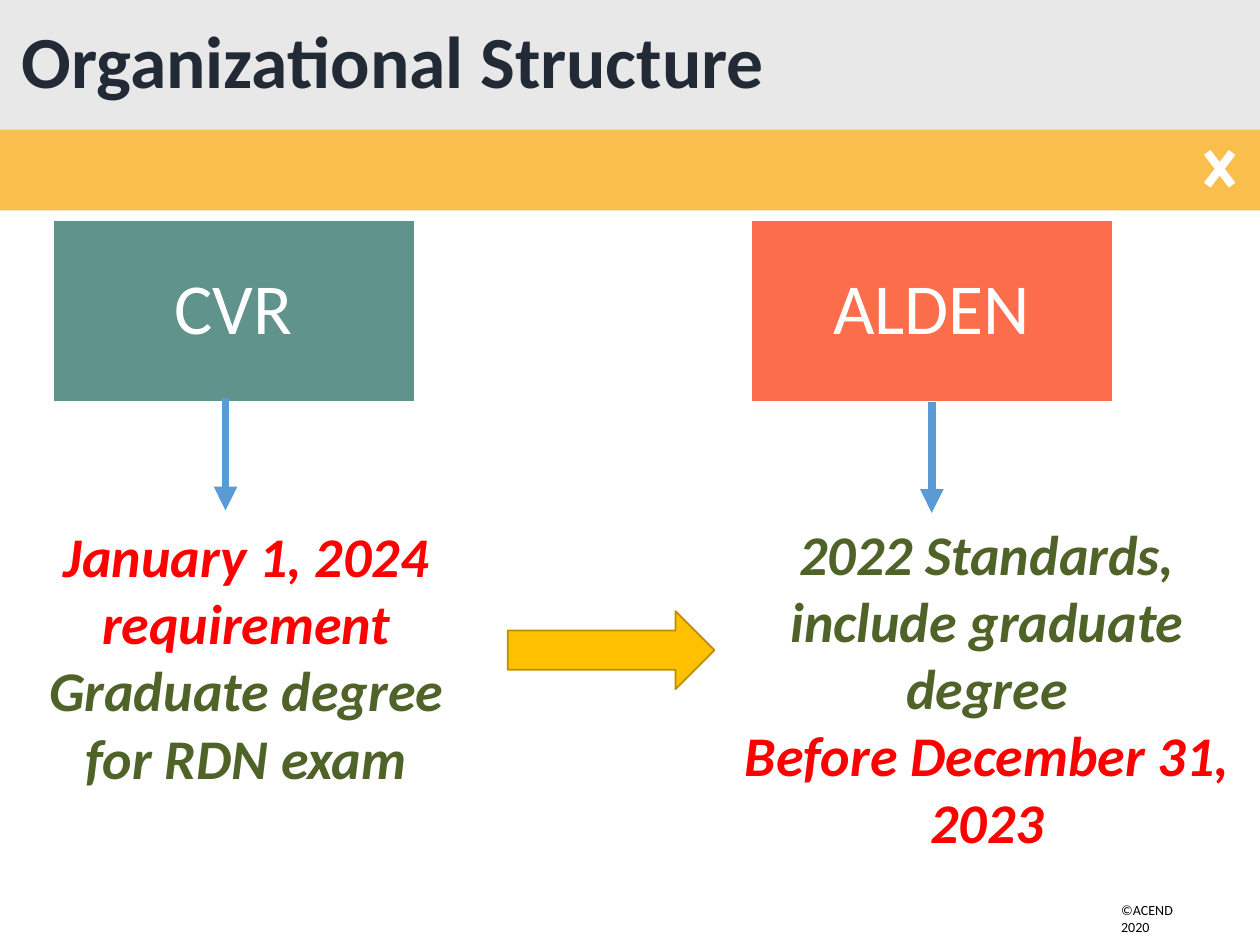
"""Build the organizational structure slide."""
from dataclasses import dataclass

from lxml import etree
from pptx import Presentation
from pptx.dml.color import RGBColor
from pptx.enum import shapes, text
from pptx.oxml.ns import qn
from pptx.util import Inches, Pt


@dataclass(frozen=True)
class Theme:
    """Colours, font and type sizes."""
    font: str = "Calibri"
    white: str = "FFFFFF"
    black: str = "000000"
    title: str = "222A35"
    header: str = "E8E8E8"
    band: str = "F9BE4B"
    teal: str = "5F938C"
    coral: str = "FC6D4B"
    blue: str = "5B9BD5"
    gold: str = "FFC000"
    gold_edge: str = "BD8E00"
    red: str = "FF0000"
    green: str = "4F6228"
    title_size: float = 42
    box_size: float = 41
    body_size: float = 32
    footer_size: float = 8


@dataclass(frozen=True)
class Box:
    """Position and size in inches."""
    left: float
    top: float
    width: float
    height: float

    def lengths(self):
        """Return the four lengths."""
        return [Inches(v) for v in (self.left, self.top, self.width, self.height)]


@dataclass(frozen=True)
class Line:
    """A paragraph and its colour."""
    words: str
    color: str


@dataclass(frozen=True)
class Organization:
    """A named box, its arrow and the requirements below."""
    name: str
    fill: str
    box: Box
    arrow_x: float
    arrow_top: float
    note: Box
    lines: tuple[Line, ...]


THEME = Theme()
ARROW_LENGTH = 0.89
ORGANIZATIONS = (
    Organization("ALDEN", THEME.coral, Box(5.96, 1.75, 2.87, 1.44), 7.39, 3.18,
                 Box(5.67, 4.07, 4.33, 2.79),
                 (Line("2022 Standards, include graduate degree", THEME.green),
                  Line("Before December 31, 2023", THEME.red))),
    Organization("CVR", THEME.teal, Box(0.42, 1.75, 2.87, 1.44), 1.79, 3.16,
                 Box(0.1, 4.09, 3.71, 2.26),
                 (Line("January 1, 2024 requirement", THEME.red),
                  Line("Graduate degree for RDN exam", THEME.green))),
)


def color(value: str) -> RGBColor:
    """Return a colour from its hex value."""
    return RGBColor.from_string(value)


def add_run(paragraph, words: str, size: float, tint: str, bold=False, italic=False) -> None:
    """Append a formatted run."""
    run = paragraph.add_run()
    run.text = words
    font = run.font
    font.name, font.size, font.bold, font.italic = THEME.font, Pt(size), bold, italic
    font.color.rgb = color(tint)


def add_block(slide, kind, box: Box, fill: str, edge: str | None = None):
    """Add a filled preset shape."""
    shape = slide.shapes.add_shape(kind, *box.lengths())
    shape.shadow.inherit = False
    shape.fill.solid()
    shape.fill.fore_color.rgb = color(fill)
    if edge:
        shape.line.color.rgb = color(edge)
        shape.line.width = Pt(1)
    else:
        shape.line.fill.background()
    return shape


def add_text(slide, box: Box, lines: tuple[Line, ...], size: float, emphasis: bool) -> None:
    """Add a text box; emphasised text is wrapped, centred, bold and italic."""
    frame = slide.shapes.add_textbox(*box.lengths()).text_frame
    frame.word_wrap = emphasis
    frame.auto_size = text.MSO_AUTO_SIZE.SHAPE_TO_FIT_TEXT
    for index, line in enumerate(lines):
        paragraph = frame.add_paragraph() if index else frame.paragraphs[0]
        if emphasis:
            paragraph.alignment = text.PP_ALIGN.CENTER
        add_run(paragraph, line.words, size, line.color, emphasis, emphasis)


def add_title(slide, words: str) -> None:
    """Format the title and bring it in front of the header."""
    title = slide.shapes.title
    title.left, title.top, title.width, title.height = Box(0.07, 0, 9.41, 1.03).lengths()
    frame = title.text_frame
    frame.auto_size = text.MSO_AUTO_SIZE.NONE
    frame.vertical_anchor = text.MSO_ANCHOR.MIDDLE
    paragraph = frame.paragraphs[0]
    paragraph.alignment = text.PP_ALIGN.LEFT
    paragraph.line_spacing = 0.9
    add_run(paragraph, words, THEME.title_size, THEME.title, bold=True)
    slide.shapes._spTree.append(title._element)


def add_arrow(slide, organization: Organization, shape) -> None:
    """Draw the downward arrow, joined where it meets the side's middle."""
    x, top = Inches(organization.arrow_x), Inches(organization.arrow_top)
    arrow = slide.shapes.add_connector(
        shapes.MSO_CONNECTOR.STRAIGHT, x, top, x, top + Inches(ARROW_LENGTH))
    if abs(shape.left + shape.width // 2 - x) < Inches(0.02):
        arrow.begin_connect(shape, 2)
        arrow.end_x = arrow.begin_x
    arrow.line.color.rgb = color(THEME.blue)
    arrow.line.width = Pt(4.5)
    etree.SubElement(arrow.line._get_or_add_ln(), qn("a:tailEnd"), type="triangle")
    etree.SubElement(arrow._element.spPr, qn("a:effectLst"))


def add_organization(slide, organization: Organization) -> None:
    """Draw one organization with its arrow and requirements."""
    shape = add_block(slide, shapes.MSO_SHAPE.RECTANGLE, organization.box,
                      organization.fill, THEME.white)
    frame = shape.text_frame
    frame.word_wrap = True
    frame.vertical_anchor = text.MSO_ANCHOR.MIDDLE
    frame.margin_left = frame.margin_right = Inches(0.03)
    frame.margin_top = frame.margin_bottom = Inches(0.03)
    paragraph = frame.paragraphs[0]
    paragraph.alignment = text.PP_ALIGN.CENTER
    paragraph.line_spacing = 0.9
    add_run(paragraph, organization.name, THEME.box_size, THEME.white)
    add_arrow(slide, organization, shape)
    add_text(slide, organization.note, organization.lines, THEME.body_size, True)


def main() -> None:
    """Build and save the presentation."""
    presentation = Presentation()
    presentation.slide_width, presentation.slide_height = Inches(10), Inches(7.5)
    slide = presentation.slides.add_slide(presentation.slide_layouts[5])
    add_block(slide, shapes.MSO_SHAPE.RECTANGLE, Box(0, 0.13, 10, 1.54), THEME.band)
    add_block(slide, shapes.MSO_SHAPE.RECTANGLE, Box(0, 0, 10, 1.03), THEME.header)
    cross = add_block(slide, shapes.MSO_SHAPE.MATH_MULTIPLY, Box(9.49, 1.09, 0.38, 0.5),
                      THEME.white)
    cross.adjustments[0] = 0.17
    add_text(slide, Box(8.8, 7.11, 0.86, 0.24), (Line("©ACEND 2020", THEME.black),),
             THEME.footer_size, False)
    add_title(slide, "Organizational Structure")
    for organization in ORGANIZATIONS:
        add_organization(slide, organization)
    link = add_block(slide, shapes.MSO_SHAPE.UP_ARROW, Box(4.54, 4.34, 0.62, 1.64),
                     THEME.gold, THEME.gold_edge)
    link.rotation = 90
    presentation.save("out.pptx")


if __name__ == "__main__":
    main()
